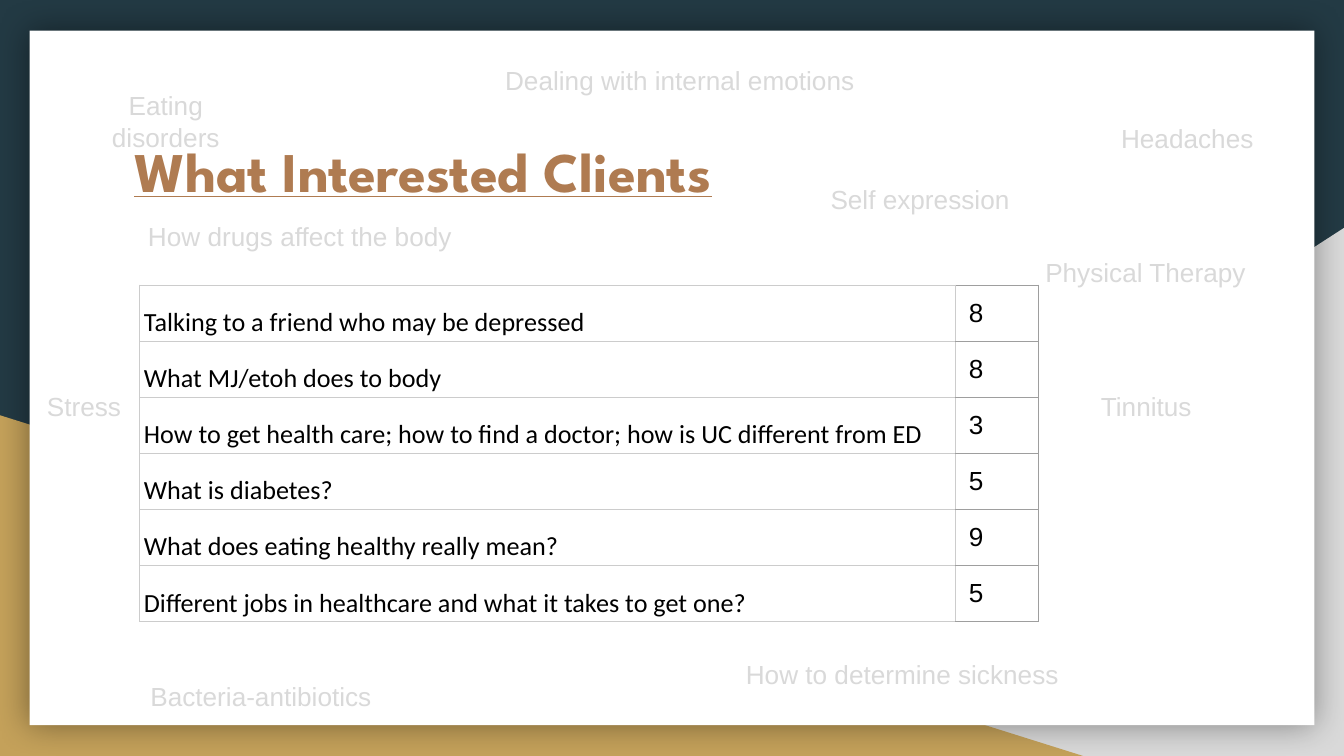
from lxml.etree import SubElement
from pptx import Presentation
from pptx.dml.color import RGBColor
from pptx.enum.shapes import MSO_SHAPE
from pptx.enum.text import MSO_ANCHOR, PP_ALIGN
from pptx.oxml.ns import qn
from pptx.util import Cm, Pt

NAVY = RGBColor(0x23, 0x3A, 0x44)
GOLD = RGBColor(0xC4, 0xA1, 0x5A)
BROWN = RGBColor(0xAF, 0x7B, 0x51)
PALE = RGBColor(0xD9, 0xD9, 0xD9)
WHITE = RGBColor(0xFF, 0xFF, 0xFF)
BLACK = RGBColor(0, 0, 0)
LIGHT_RULE = RGBColor(0xCC, 0xCC, 0xCC)
DARK_RULE = RGBColor(0x9E, 0x9E, 0x9E)

TITLE = "What Interested Clients"
INTERESTS = [
    ("Talking to a friend who may be depressed", 8),
    ("What MJ/etoh does to body", 8),
    ("How to get health care; how to find a doctor; how is UC different from ED", 3),
    ("What is diabetes?", 5),
    ("What does eating healthy really mean?", 9),
    ("Different jobs in healthcare and what it takes to get one?", 5),
]
# Scattered topics: text, then left, top, width, height in cm
TOPICS = [
    ("Headaches", 20.19, 2.18, 4.5, 0.97),
    ("Bacteria-antibiotics", 1.14, 12.73, 7.59, 0.76),
    ("Dealing with internal emotions", 7.44, 1.09, 10.82, 0.97),
    ("Stress", 0.51, 7.26, 2.16, 0.97),
    ("Tinnitus", 20.19, 7.26, 2.95, 0.97),
    ("How drugs affect the body", 0.69, 4.04, 9.96, 0.97),
    ("Self expression", 14.99, 3.35, 4.8, 1.17),
    ("How to determine sickness", 11.76, 12.32, 10.59, 0.76),
    ("Eating disorders", 1.14, 1.57, 3.99, 0.76),
    ("Physical Therapy", 18.69, 4.72, 5.92, 0.97),
]
# Backdrop: preset, colour, then left, top, width, height in cm
BACKDROP = [
    (MSO_SHAPE.RIGHT_TRIANGLE, PALE, 9.96, 4.31, 15.44, 9.98),
    (MSO_SHAPE.RIGHT_TRIANGLE, GOLD, 0, 7.85, 20.47, 6.44),
    (MSO_SHAPE.RECTANGLE, WHITE, 0.56, 0.58, 24.28, 13.13),
]
COLUMN_WIDTHS = (15.42, 1.57)
ROW_HEIGHT = 1.06


def add_backdrop(s):
    shapes = []
    for preset, color, *box in BACKDROP:
        sp = s.shapes.add_shape(preset, *map(Cm, box))
        sp.shadow.inherit = False
        sp.fill.solid()
        sp.fill.fore_color.rgb = color
        sp.line.fill.background()
        shapes.append(sp)
    grey, _, card = shapes
    grey.element.spPr.get_or_add_xfrm().set("flipH", "1")
    effects = card.element.spPr.find(qn("a:effectLst"))
    shadow = SubElement(effects, qn("a:outerShdw"), blurRad=str(Pt(18)),
                        dist="0", dir="0", algn="ctr", rotWithShape="0")
    black = SubElement(shadow, qn("a:srgbClr"), val=str(BLACK))
    SubElement(black, qn("a:alpha"), val="40000")


def set_margins(target, horizontal, vertical):
    target.margin_left = target.margin_right = Cm(horizontal)
    target.margin_top = target.margin_bottom = Cm(vertical)


def set_font(p, size, name, color):
    p.font.size = Pt(size)
    p.font.name = name
    p.font.color.rgb = color


def place_title(s):
    title = s.shapes.title
    title.left, title.top, title.width, title.height = map(
        Cm, (2.29, 2.34, 20.85, 2.64))
    tf = title.text_frame
    tf.text = TITLE
    tf.vertical_anchor = MSO_ANCHOR.TOP
    set_margins(tf, 0.25, 0.25)
    p = tf.paragraphs[0]
    p.alignment = PP_ALIGN.LEFT
    set_font(p, 30, "League Spartan", BROWN)
    p.font.bold = p.font.underline = True
    s.shapes.element.append(title.element)  # in front of the backdrop


def set_borders(cell, left, others):
    tc_pr = cell._tc.get_or_add_tcPr()
    for side, color in zip("LRTB", (left, others, others, others)):
        ln = SubElement(tc_pr, qn(f"a:ln{side}"), w=str(Pt(0.75)))
        fill = SubElement(ln, qn("a:solidFill"))
        SubElement(fill, qn("a:srgbClr"), val=str(color))


def add_interest_table(s):
    rows = len(INTERESTS)
    frame = s.shapes.add_table(rows, 2, Cm(2.64), Cm(5.39),
                               Cm(sum(COLUMN_WIDTHS)), Cm(rows * ROW_HEIGHT))
    table = frame.table
    table.first_row = table.horz_banding = False
    for column, width in zip(table.columns, COLUMN_WIDTHS):
        column.width = Cm(width)
    for row, (interest, count) in zip(table.rows, INTERESTS):
        row.height = Cm(ROW_HEIGHT)
        topic, number = row.cells
        topic.text, number.text = interest, str(count)
        topic.vertical_anchor = MSO_ANCHOR.BOTTOM
        topic.text_frame.paragraphs[0].line_spacing = 1.15
        set_margins(topic, 0.08, 0.05)
        set_margins(number, 0.25, 0.25)
        for cell, font, rule in ((topic, "Calibri", LIGHT_RULE),
                                 (number, "Arial", DARK_RULE)):
            set_font(cell.text_frame.paragraphs[0], 14, font, BLACK)
            set_borders(cell, LIGHT_RULE, rule)
            cell.fill.background()


def add_topics(s):
    for text, *box in TOPICS:
        tf = s.shapes.add_textbox(*map(Cm, box)).text_frame
        tf.word_wrap = True
        tf.text = text
        p = tf.paragraphs[0]
        p.alignment = PP_ALIGN.CENTER
        set_font(p, 14, "Arial", PALE)


def main():
    prs = Presentation()
    prs.slide_width, prs.slide_height = Cm(25.4), Cm(14.29)
    s = prs.slides.add_slide(prs.slide_layouts[5])
    s.background.fill.solid()
    s.background.fill.fore_color.rgb = NAVY
    add_backdrop(s)
    place_title(s)
    add_interest_table(s)
    add_topics(s)
    prs.save("out.pptx")


if __name__ == "__main__":
    main()
